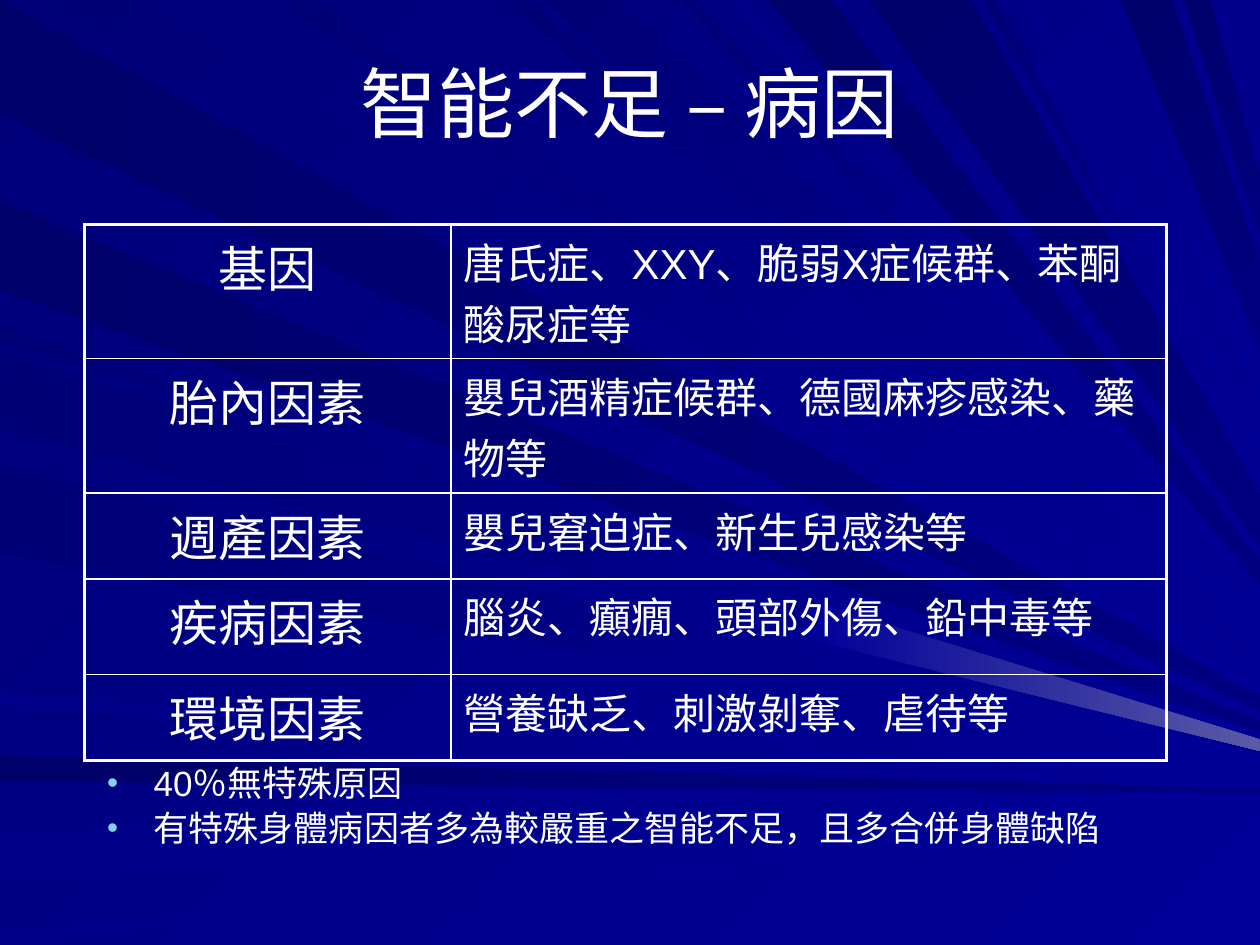
from lxml.etree import SubElement
from pptx import Presentation
from pptx.dml.color import RGBColor as Rgb
from pptx.enum.text import MSO_ANCHOR as Anchor, MSO_AUTO_SIZE as Fit, PP_ALIGN as Align
from pptx.oxml import parse_xml
from pptx.oxml.ns import nsdecls, qn
from pptx.util import Inches, Pt

HUES = {"white": "FFFFFF", "aqua": "86D1EC", "night": "000078", "royal": "000099",
        "ink": "00006B", "navy": "000080", "deep": "000076", "faint": "000088",
        "haze": "5A5AA6"}
WIDE, HIGH = 10, 7.5

# Rays narrow towards a hub right of the slide; spans are where they leave an edge
HUB = (11.4, 6.3)
LEFT = [
    ("ink", "navy", [(0, 0.9), (1.6, 2.3), (6, 6.2)]),
    ("deep", "royal", [(2.6, 2.7), (2.8, 3.4), (3.7, 4.4)]),
    ("faint", "royal", [(5.5, 5.6), (6.6, 7), (7.4, 7.5)]),
]
TOP = [
    ("deep", "royal", [(0.3, 1), (2.2, 2.5), (4, 4.2), (4.3, 4.9), (5.4, 5.5), (7.8, 7.9)]),
    ("ink", "navy", [(6.1, 6.6), (6.9, 7.7), (8.9, 9.3), (9.4, 9.6)]),
    ("faint", "royal", [(5.8, 5.9), (8.1, 8.2), (8.6, 8.7)]),
]

ROWS = [
    (0.99, "基因", "唐氏症、XXY、脆弱X症候群、苯酮酸尿症等"),
    (0.99, "胎內因素", "嬰兒酒精症候群、德國麻疹感染、藥物等"),
    (0.68, "週產因素", "嬰兒窘迫症、新生兒感染等"),
    (0.76, "疾病因素", "腦炎、癲癇、頭部外傷、鉛中毒等"),
    (0.68, "環境因素", "營養缺乏、刺激剝奪、虐待等"),
]
COLS = [2.91, 5.68]
NOTES = ["40％無特殊原因", "有特殊身體病因者多為較嚴重之智能不足，且多合併身體缺陷"]


def blend(fill, first, last, turn):
    fill.gradient()
    fill.gradient_angle = -turn % 360
    for stop, hue in zip(fill.gradient_stops, (first, last)):
        stop.color.rgb = Rgb.from_string(HUES[hue])


def style(para, size, align):
    para.alignment = align
    para.font.name = "Arial"
    para.font.size = Pt(size)
    para.font.color.rgb = Rgb.from_string(HUES["white"])


deck = Presentation()
deck.slide_width, deck.slide_height = Inches(WIDE), Inches(HIGH)
slide = deck.slides.add_slide(deck.slide_layouts[1])
title, body = slide.placeholders
tree = title.element.getparent()

# Background and its rays
blend(slide.background.fill, "night", "royal", 45)
beams = [(first, last, 0, (0, a), (0, b), 0) for first, last, spans in LEFT for a, b in spans]
beams += [(first, last, 45, (a, 0), (b, 0), 0) for first, last, spans in TOP for a, b in spans]
beams.append(("royal", "haze", 0, (0, 2.8), (0, 3.5), 6.4))
for first, last, turn, a, b, near in beams:
    dots = []
    for (x, y), ends in ((a, (near, WIDE)), (b, (WIDE, near))):
        for end in ends:
            end = max(end, x)
            rise = (end - x) / (HUB[0] - x) * (HUB[1] - y)
            dots.append((round(end * 100), round((y + rise) * 100)))
    pen = slide.shapes.build_freeform(*dots[0], scale=Inches(0.01))
    pen.add_line_segments(dots[1:], close=True)
    ray = pen.convert_to_shape()
    ray.shadow.inherit = False
    ray.line.fill.background()
    blend(ray.fill, first, last, turn)

# Title and notes, placed above the rays
for box, area in ((title, (0.5, 0.3, 9, 1.01)), (body, (0.75, 6.03, 8.83, 1.02))):
    tree.append(box.element)
    box.left, box.top, box.width, box.height = map(Inches, area)
    box.text_frame.auto_size = Fit.NONE
title.text_frame.text = "智能不足 – 病因"
title.text_frame.vertical_anchor = Anchor.MIDDLE
style(title.text_frame.paragraphs[0], 44, Align.CENTER)

body.text_frame.text = "\n".join(NOTES)
body.text_frame.vertical_anchor = Anchor.TOP
for para in body.text_frame.paragraphs:
    style(para, 20, Align.LEFT)
    para.line_spacing = 0.9
    para.space_before = Pt(4)
    props = para._p.get_or_add_pPr()
    props.set("marL", str(Inches(0.37)))
    props.set("indent", str(-Inches(0.37)))
    tint = SubElement(props, qn("a:buClr"))
    SubElement(tint, qn("a:srgbClr"), val=HUES["aqua"])
    SubElement(props, qn("a:buSzPct"), val="90000")
    SubElement(props, qn("a:buFont"), typeface="Arial")
    SubElement(props, qn("a:buChar"), char="•")
    # Bullet parts come before the default run format
    for run in props.findall(qn("a:defRPr")):
        props.append(run)

# Table of causes
frame = slide.shapes.add_table(len(ROWS), len(COLS), Inches(0.67), Inches(1.78),
                               Inches(sum(COLS)), Inches(sum(row[0] for row in ROWS)))
grid = frame.table
grid.first_row = grid.horz_banding = False
for col, width in zip(grid.columns, COLS):
    col.width = Inches(width)
for y, (height, *words) in enumerate(ROWS):
    grid.rows[y].height = Inches(height)
    for x, word in enumerate(words):
        cell = grid.cell(y, x)
        cell.text = word
        cell.fill.background()
        size, align = ((28, Align.CENTER), (24, Align.LEFT))[x]
        para = cell.text_frame.paragraphs[0]
        style(para, size, align)
        para.space_before = Pt(size * 0.2)
        # Thick outer frame, thin inner lines
        outer = {"L": x == 0, "R": x == 1, "T": y == 0, "B": y == len(ROWS) - 1}
        for i, (side, thick) in enumerate(outer.items()):
            cell._tc.get_or_add_tcPr().insert(i, parse_xml(
                f'<a:ln{side} {nsdecls("a")} w="{Pt(2.25 if thick else 1)}"><a:solidFill>'
                f'<a:srgbClr val="{HUES["white"]}"/></a:solidFill></a:ln{side}>'))

deck.save("out.pptx")
